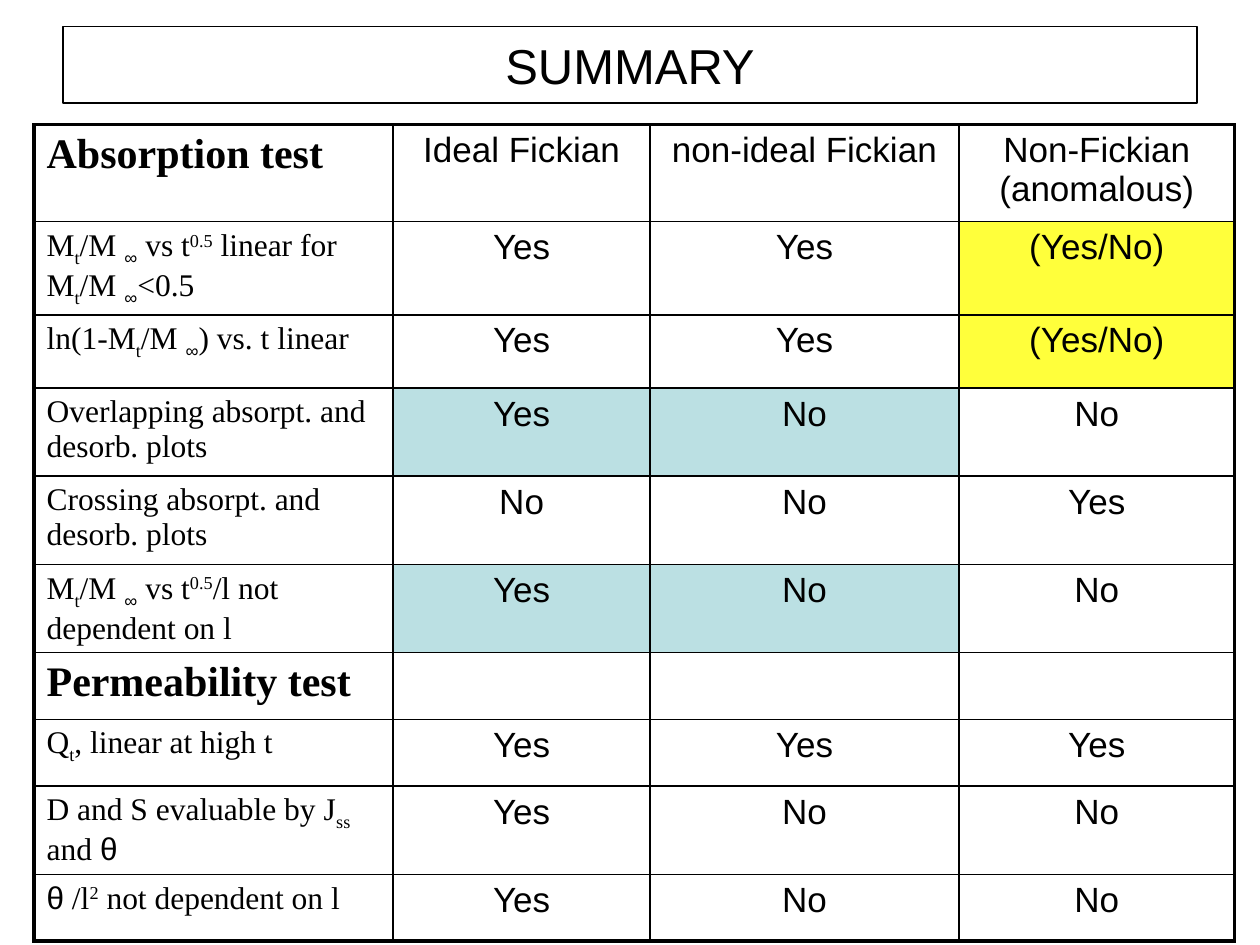
from dataclasses import dataclass
from typing import Optional

from lxml.etree import SubElement
from pptx import Presentation
from pptx.dml.color import RGBColor
from pptx.enum.text import MSO_ANCHOR, PP_ALIGN
from pptx.oxml import parse_xml
from pptx.oxml.ns import nsdecls, qn
from pptx.util import Inches, Pt

BLACK = RGBColor(0x00, 0x00, 0x00)
WHITE = RGBColor(0xFF, 0xFF, 0xFF)
YELLOW = RGBColor(0xFF, 0xFF, 0x00)
TEAL = RGBColor(0xBB, 0xE0, 0xE3)

SANS, SERIF = "Arial", "Times New Roman"
BASELINES = {"_": "-25000", "^": "30000"}
SANS_SYMBOLS = "∞θ"
INNER, OUTER = 1, 2.25
COLUMNS = (2.85, 2.04, 2.45, 2.19)


@dataclass(frozen=True)
class Criterion:
    label: str
    answers: tuple[str, str, str]
    height: float
    heading: bool = False
    highlight: Optional[RGBColor] = None
    highlighted: tuple[int, ...] = ()


CRITERIA = (
    Criterion("Absorption test",
              ("Ideal Fickian", "non-ideal Fickian", "Non-Fickian (anomalous)"), 0.77, True),
    Criterion("M|_t|/M |_∞| vs t|^0.5| linear for M|_t|/M |_∞|<0.5",
              ("Yes", "Yes", "(Yes/No)"), 0.74, False, YELLOW, (3,)),
    Criterion("ln(1-M|_t|/M |_∞|) vs. t linear",
              ("Yes", "Yes", "(Yes/No)"), 0.58, False, YELLOW, (3,)),
    Criterion("Overlapping absorpt. and desorb. plots",
              ("Yes", "No", "No"), 0.7, False, TEAL, (1, 2)),
    Criterion("Crossing absorpt. and desorb. plots", ("No", "No", "Yes"), 0.7),
    Criterion("M|_t|/M |_∞| vs t|^0.5|/l not dependent on l",
              ("Yes", "No", "No"), 0.7, False, TEAL, (1, 2)),
    Criterion("Permeability test", ("", "", ""), 0.53, True),
    Criterion("Q|_t|, linear at high t", ("Yes", "Yes", "Yes"), 0.53),
    Criterion("D and S evaluable by J|_ss| and |θ", ("Yes", "No", "No"), 0.7),
    Criterion("θ| /l|^2| not dependent on l", ("Yes", "No", "No"), 0.53),
)


def style_run(run, size: float, font: str, bold: bool = False) -> None:
    run.font.size = Pt(size)
    run.font.name = font
    run.font.bold = bold
    run.font.color.rgb = BLACK


def space_before(paragraph) -> None:
    spacing = SubElement(paragraph._p.get_or_add_pPr(), qn("a:spcBef"))
    SubElement(spacing, qn("a:spcPct")).set("val", "20000")


def write_label(cell, criterion: Criterion) -> None:
    paragraph = cell.text_frame.paragraphs[0]
    space_before(paragraph)
    for part in criterion.label.split("|"):
        baseline = BASELINES.get(part[0])
        run = paragraph.add_run()
        run.text = part[1:] if baseline else part
        font = SANS if run.text in SANS_SYMBOLS else SERIF
        style_run(run, 24 if criterion.heading else 18, font, criterion.heading)
        if baseline:
            run.font._element.set("baseline", baseline)


def write_answer(cell, answer: str) -> None:
    cell.text_frame.text = answer
    paragraph = cell.text_frame.paragraphs[0]
    paragraph.alignment = PP_ALIGN.CENTER
    space_before(paragraph)
    for run in paragraph.runs:
        style_run(run, 20, SANS)


def draw_borders(cell, row: int, column: int) -> None:
    on_edge = {
        "L": column == 0,
        "R": column == len(COLUMNS) - 1,
        "T": row == 0,
        "B": row == len(CRITERIA) - 1,
    }
    for side, outer in on_edge.items():
        width = Pt(OUTER if outer else INNER)
        cell._tc.get_or_add_tcPr().append(parse_xml(
            f'<a:ln{side} {nsdecls("a")} w="{width}"><a:solidFill>'
            f'<a:srgbClr val="{BLACK}"/></a:solidFill></a:ln{side}>'))


def fill_cell(cell, colour: Optional[RGBColor]) -> None:
    if colour is None:
        cell.fill.background()
        return
    cell.fill.solid()
    cell.fill.fore_color.rgb = colour
    if colour == YELLOW:
        tint = cell._tc.tcPr.find(qn("a:solidFill")).find(qn("a:srgbClr"))
        SubElement(tint, qn("a:alpha")).set("val", "77000")


def draw_title(slide, width: int, height: int) -> None:
    title = slide.shapes.title
    title.left, title.top = int(width * 0.05), int(height * 0.028)
    title.width, title.height = int(width * 0.9), int(height * 0.081)
    title.fill.background()
    title.line.color.rgb = BLACK
    title.line.width = Pt(0.75)
    title.text_frame.text = "SUMMARY"
    title.text_frame.vertical_anchor = MSO_ANCHOR.MIDDLE
    heading = title.text_frame.paragraphs[0]
    heading.alignment = PP_ALIGN.CENTER
    style_run(heading.runs[0], 28, SANS)


def draw_comparison(slide) -> None:
    table = slide.shapes.add_table(
        len(CRITERIA), len(COLUMNS), Inches(0.27), Inches(0.99),
        Inches(sum(COLUMNS)), Inches(sum(c.height for c in CRITERIA))).table
    table.first_row = table.horz_banding = False
    for column, share in zip(table.columns, COLUMNS):
        column.width = Inches(share)
    for row, criterion in enumerate(CRITERIA):
        table.rows[row].height = Inches(criterion.height)
        write_label(table.cell(row, 0), criterion)
        for column, answer in enumerate(criterion.answers, start=1):
            write_answer(table.cell(row, column), answer)
        for column in range(len(COLUMNS)):
            cell = table.cell(row, column)
            draw_borders(cell, row, column)
            fill_cell(cell, criterion.highlight if column in criterion.highlighted else None)


def main() -> None:
    deck = Presentation()
    deck.slide_width, deck.slide_height = Inches(10), Inches(7.5)
    slide = deck.slides.add_slide(deck.slide_layouts[5])
    slide.background.fill.solid()
    slide.background.fill.fore_color.rgb = WHITE
    draw_title(slide, deck.slide_width, deck.slide_height)
    draw_comparison(slide)
    deck.save("out.pptx")


if __name__ == "__main__":
    main()
